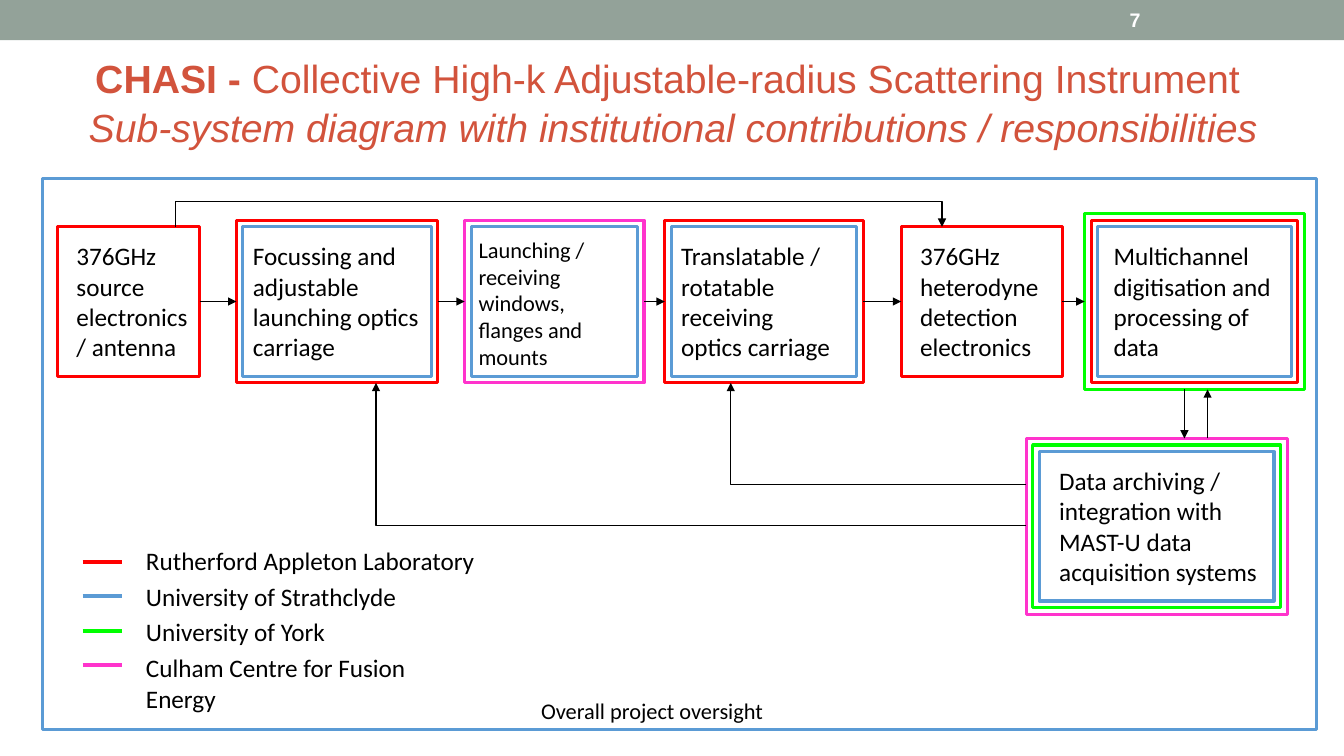
from dataclasses import dataclass

from lxml import etree
from pptx import Presentation
from pptx.dml.color import RGBColor
from pptx.enum.shapes import MSO_CONNECTOR, MSO_SHAPE
from pptx.enum.text import MSO_ANCHOR, PP_ALIGN
from pptx.oxml.ns import qn
from pptx.util import Inches, Pt

RECTANGLE = MSO_SHAPE.RECTANGLE
STRAIGHT = MSO_CONNECTOR.STRAIGHT
MIDDLE, TOP = MSO_ANCHOR.MIDDLE, MSO_ANCHOR.TOP
CENTER = PP_ALIGN.CENTER

BLACK = RGBColor(0x00, 0x00, 0x00)
WHITE = RGBColor(0xFF, 0xFF, 0xFF)
SAGE = RGBColor(0x93, 0xA2, 0x99)
RUST = RGBColor(0xD2, 0x53, 0x3C)
RUTHERFORD = RGBColor(0xFF, 0x00, 0x00)
STRATHCLYDE = RGBColor(0x5B, 0x9B, 0xD5)
YORK = RGBColor(0x00, 0xFF, 0x00)
CULHAM = RGBColor(0xFF, 0x33, 0xCC)

COLUMNS, ROWS = 160, 90
CELL = Inches(7.5) / ROWS
FRAME_STEP = 0.78
STATION_HEIGHT = 17.8

INSTITUTIONS = [
    ("Rutherford Appleton Laboratory", RUTHERFORD),
    ("University of Strathclyde", STRATHCLYDE),
    ("University of York", YORK),
    ("Culham Centre for Fusion Energy", CULHAM),
]


@dataclass
class Box:
    x: float
    y: float
    w: float
    h: float

    @property
    def right(self):
        return self.x + self.w

    @property
    def bottom(self):
        return self.y + self.h

    def grown(self, step):
        return Box(self.x - step, self.y - step, self.w + 2 * step, self.h + 2 * step)

    def emu(self):
        return [cells(length) for length in (self.x, self.y, self.w, self.h)]


@dataclass
class Station:
    text: str
    x: float
    width: float
    owners: list
    text_dx: float = 0
    text_dy: float = 1.05
    text_width: float = 22.4
    size: int = 18


CHAIN = [
    Station("376GHz source electronics / antenna", 6.84, 16.92, [RUTHERFORD], 1.08, text_width=16.68),
    Station("Focussing and adjustable launching optics carriage", 28.92, 22.44,
            [STRATHCLYDE, RUTHERFORD]),
    Station("Launching / receiving windows, flanges and mounts", 56.1, 19.8,
            [STRATHCLYDE, CULHAM], -0.3, 0.48, 20.16, 16),
    Station("Translatable / rotatable receiving optics carriage", 79.92, 22.08,
            [STRATHCLYDE, RUTHERFORD], text_width=20.76),
    Station("376GHz heterodyne detection electronics", 107.28, 19.2, [RUTHERFORD], 1.08, text_width=16.68),
    Station("Multichannel digitisation and processing of data", 130.68, 23.04,
            [STRATHCLYDE, RUTHERFORD, YORK], 0.72, text_width=22.2),
]
ARCHIVE = Station("Data archiving / integration with MAST-U data acquisition systems",
                  123.72, 27.96, [STRATHCLYDE, YORK, CULHAM], 1.2, text_width=26.76)


def cells(count):
    return round(count * CELL)


def add_text(slide, box, text, size, font="Calibri", color=BLACK, anchor=TOP, wrap=True):
    frame = slide.shapes.add_textbox(*box.emu()).text_frame
    frame.word_wrap = wrap
    frame.vertical_anchor = anchor
    frame.text = text
    for paragraph in frame.paragraphs:
        paragraph.font.size = Pt(size)
        paragraph.font.name = font
        paragraph.font.color.rgb = color
    return frame


def add_frame(slide, box, color):
    outline = slide.shapes.add_shape(RECTANGLE, *box.emu())
    outline.shadow.inherit = False
    outline.fill.background()
    outline.line.color.rgb = color
    outline.line.width = Pt(2.25)


def style_line(drawn, color, width, arrow):
    drawn.line.color.rgb = color
    drawn.line.width = Pt(width)
    if arrow:
        etree.SubElement(drawn.line._get_or_add_ln(), qn("a:tailEnd"), type="triangle")


def add_line(slide, start, end, color=BLACK, width=0.5, arrow=True):
    connector = slide.shapes.add_connector(STRAIGHT, *map(cells, start + end))
    style_line(connector, color, width, arrow)
    etree.SubElement(connector._element.spPr, qn("a:effectLst"))


def add_route(slide, points):
    corners = [tuple(map(cells, point)) for point in points]
    builder = slide.shapes.build_freeform(*corners[0])
    builder.add_line_segments(corners[1:], close=False)
    route = builder.convert_to_shape()
    route.shadow.inherit = False
    route.fill.background()
    style_line(route, BLACK, 1, True)


def add_header(slide, box):
    band = slide.shapes.add_shape(RECTANGLE, *box.emu())
    band.shadow.inherit = False
    band.fill.solid()
    band.fill.fore_color.rgb = SAGE
    band.line.fill.background()
    number_box = Box(box.right - 26.68, box.y + 0.24, 18.72, box.h - 0.48)
    number = add_text(slide, number_box, "7", 14, "Arial", WHITE, MIDDLE)
    number.paragraphs[0].font.bold = True


def add_title(slide, box):
    title = add_text(
        slide, box,
        "CHASI - \nSub-system diagram with institutional contributions / responsibilities",
        28, "Arial", RUST, MIDDLE)
    name, subtitle = title.paragraphs
    name.runs[0].font.bold = True
    name.add_run().text = "Collective High-k Adjustable-radius Scattering Instrument "
    subtitle.runs[0].font.italic = True
    for paragraph in title.paragraphs:
        paragraph.alignment = CENTER
        paragraph.line_spacing = 1.04


def add_station(slide, station, top):
    core = Box(station.x, top, station.width, STATION_HEIGHT)
    layers = [core.grown(FRAME_STEP * level) for level in range(len(station.owners))]
    for layer, owner in zip(layers, station.owners):
        add_frame(slide, layer, owner)
    text_box = Box(core.x + station.text_dx, top + station.text_dy, station.text_width, 15.72)
    add_text(slide, text_box, station.text, station.size)
    return layers[-1]


def add_system(slide, box):
    add_frame(slide, box, STRATHCLYDE)
    top = box.y + 5.76
    chain = [add_station(slide, station, top) for station in CHAIN]
    archive = add_station(slide, ARCHIVE, top + 26.76)
    middle = top + STATION_HEIGHT / 2
    for before, after in zip(chain, chain[1:]):
        add_line(slide, (before.right, middle), (after.x, middle))

    source, focusing, _, receiving, detection, digitising = chain
    bypass_start, bypass_end = source.x + 14.04, detection.x + 4.86
    add_route(slide, [(bypass_start, source.y), (bypass_start, top - 3),
                      (bypass_end, top - 3), (bypass_end, detection.y)])
    for target, dx, dy in [(receiving, 7.86, 5.46), (focusing, 16.62, 10.38)]:
        x, y = target.x + dx, archive.y + dy
        add_route(slide, [(archive.x, y), (x, y), (x, target.bottom)])

    down, up = digitising.x + 11.88, digitising.x + 14.64
    add_line(slide, (down, digitising.bottom), (down, archive.y))
    add_line(slide, (up, archive.y), (up, digitising.bottom))
    add_text(slide, Box(box.x + 58.2, box.bottom - 4.44, 29.28, 4.44),
             "Overall project oversight", 16, wrap=False)


def add_legend(slide, box):
    for row, (institution, color) in enumerate(INSTITUTIONS):
        line_y = box.y + 2.6 + row * 4.08
        add_line(slide, (box.x, line_y), (box.x + 4.68, line_y), color, 3, False)
        label = Box(box.x + 6.36, box.y + row * box.h / len(INSTITUTIONS), box.w - 6.36, 4.8)
        add_text(slide, label, institution, 18, wrap=False)


def main():
    deck = Presentation()
    deck.slide_width, deck.slide_height = cells(COLUMNS), cells(ROWS)
    slide = deck.slides.add_slide(deck.slide_layouts[6])
    add_header(slide, Box(0, 0, COLUMNS, 4.8))
    add_title(slide, Box(5.04, 4.56, 150.12, 15))
    add_system(slide, Box(5.04, 21.24, 151.68, 65.64))
    add_legend(slide, Box(9.84, 64.32, 48.36, 17.04))
    deck.save("out.pptx")


if __name__ == "__main__":
    main()
